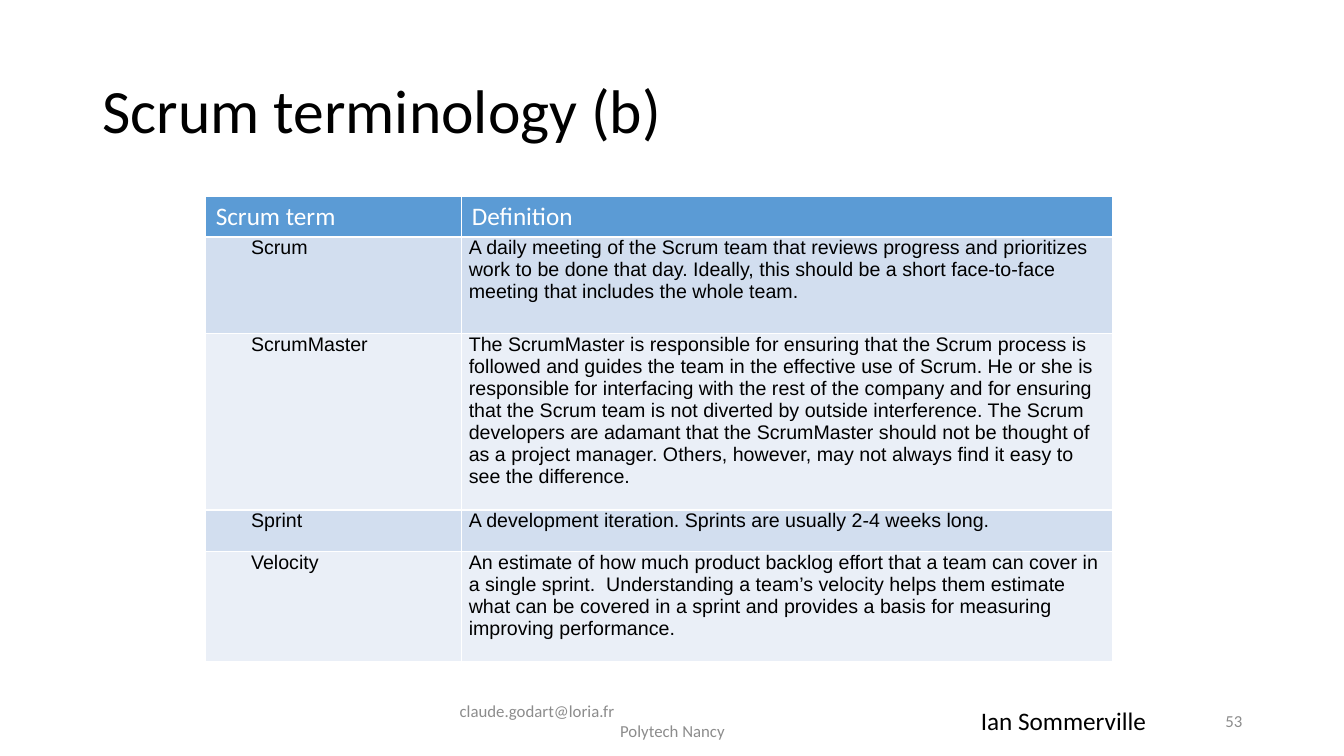
from lxml import etree
from pptx import Presentation
from pptx.dml.color import RGBColor
from pptx.enum import text as t
from pptx.oxml.ns import qn
from pptx.util import Inches, Pt

# Content
TITLE = "Scrum terminology (b)"
HEADER = ("Scrum term", "Definition")
TERMS = [
    ("Scrum", "A daily meeting of the Scrum team that reviews progress and prioritizes work to be "
     "done that day. Ideally, this should be a short face-to-face meeting that includes the whole team."),
    ("ScrumMaster", "The ScrumMaster is responsible for ensuring that the Scrum process is followed and "
     "guides the team in the effective use of Scrum. He or she is responsible for interfacing with the "
     "rest of the company and for ensuring that the Scrum team is not diverted by outside interference. "
     "The Scrum developers are adamant that the ScrumMaster should not be thought of as a project "
     "manager. Others, however, may not always find it easy to see the difference."),
    ("Sprint", "A development iteration. Sprints are usually 2-4 weeks long."),
    ("Velocity", "An estimate of how much product backlog effort that a team can cover in a single "
     "sprint.  Understanding a team’s velocity helps them estimate what can be covered in a sprint and "
     "provides a basis for measuring improving performance."),
]
EMAIL, SCHOOL = "claude.godart@loria.fr", "Polytech Nancy"
AUTHOR, PAGE = "Ian Sommerville", "53"

COLORS = {"text": "000000", "white": "FFFFFF", "header": "5B9BD5",
          "odd": "D2DEEF", "even": "EAEFF7", "footer": "8C8C8C"}
COLUMN_WIDTHS = (2.54, 6.46)
ROW_HEIGHTS = (0.4, 0.96, 1.75, 0.41, 1.09)
FOOTER_TOP, FOOTER_HEIGHT = 6.95, 0.4


def write(paragraph, words, size=12, font="Calibri", color="text",
          align=t.PP_ALIGN.LEFT, indent=0, after=0, line=None):
    properties = paragraph._p.get_or_add_pPr()
    properties.set("marL", "0")
    properties.set("indent", str(Inches(indent)))
    paragraph.alignment = align
    paragraph.space_after = Pt(after)
    if line:
        paragraph.line_spacing = line
    run = paragraph.add_run()
    run.text = words
    run.font.size = Pt(size)
    run.font.name = font
    run.font.color.rgb = RGBColor.from_string(COLORS[color])


def text_frame(left, top, width, height, wrap=True, anchor=t.MSO_ANCHOR.MIDDLE):
    frame = slide.shapes.add_textbox(*map(Inches, (left, top, width, height))).text_frame
    frame.word_wrap = wrap
    frame.vertical_anchor = anchor
    return frame


def style_cell(cell, fill):
    properties = cell._tc.get_or_add_tcPr()
    for side in ("lnL", "lnR", "lnT", "lnB"):
        border = etree.SubElement(properties, qn(f"a:{side}"), w=str(Pt(1)))
        solid = etree.SubElement(border, qn("a:solidFill"))
        etree.SubElement(solid, qn("a:srgbClr"), val=COLORS["white"])
    cell.fill.solid()
    cell.fill.fore_color.rgb = RGBColor.from_string(COLORS[fill])


prs = Presentation()
prs.slide_width, prs.slide_height = Inches(13.33), Inches(7.5)
slide = prs.slides.add_slide(prs.slide_layouts[6])

# Title
write(text_frame(0.92, 0.4, 11.5, 1.45).paragraphs[0], TITLE, size=44, line=0.9)

# Table of terms
glossary = slide.shapes.add_table(
    len(ROW_HEIGHTS), len(COLUMN_WIDTHS), Inches(2.04), Inches(1.95),
    Inches(sum(COLUMN_WIDTHS)), Inches(sum(ROW_HEIGHTS))).table
for column, width in zip(glossary.columns, COLUMN_WIDTHS):
    column.width = Inches(width)
for row, height in zip(glossary.rows, ROW_HEIGHTS):
    row.height = Inches(height)

for r, entry in enumerate([HEADER] + TERMS):
    for c, words in enumerate(entry):
        cell = glossary.cell(r, c)
        paragraph = cell.text_frame.paragraphs[0]
        if r == 0:
            style_cell(cell, "header")
            write(paragraph, words, size=18, color="white")
        else:
            style_cell(cell, "odd" if r % 2 else "even")
            cell.margin_left = cell.margin_right = Inches(0.07)
            cell.margin_top = cell.margin_bottom = 0
            write(paragraph, words, size=14, font="Arial",
                  indent=0.38 if c == 0 else 0, after=6 if r == 1 else 0)

# Footer: page number, author, contact
page = text_frame(9.42, FOOTER_TOP, 3, FOOTER_HEIGHT)
write(page.paragraphs[0], PAGE, color="footer", align=t.PP_ALIGN.RIGHT)

author = text_frame(9.63, FOOTER_TOP, 1.86, FOOTER_HEIGHT, wrap=False, anchor=t.MSO_ANCHOR.TOP)
write(author.paragraphs[0], AUTHOR, size=18)

contact = text_frame(4.42, FOOTER_TOP, 4.5, FOOTER_HEIGHT)
write(contact.paragraphs[0], EMAIL, color="footer", indent=0.04)
write(contact.add_paragraph(), SCHOOL, color="footer", align=t.PP_ALIGN.CENTER)

prs.save("out.pptx")
